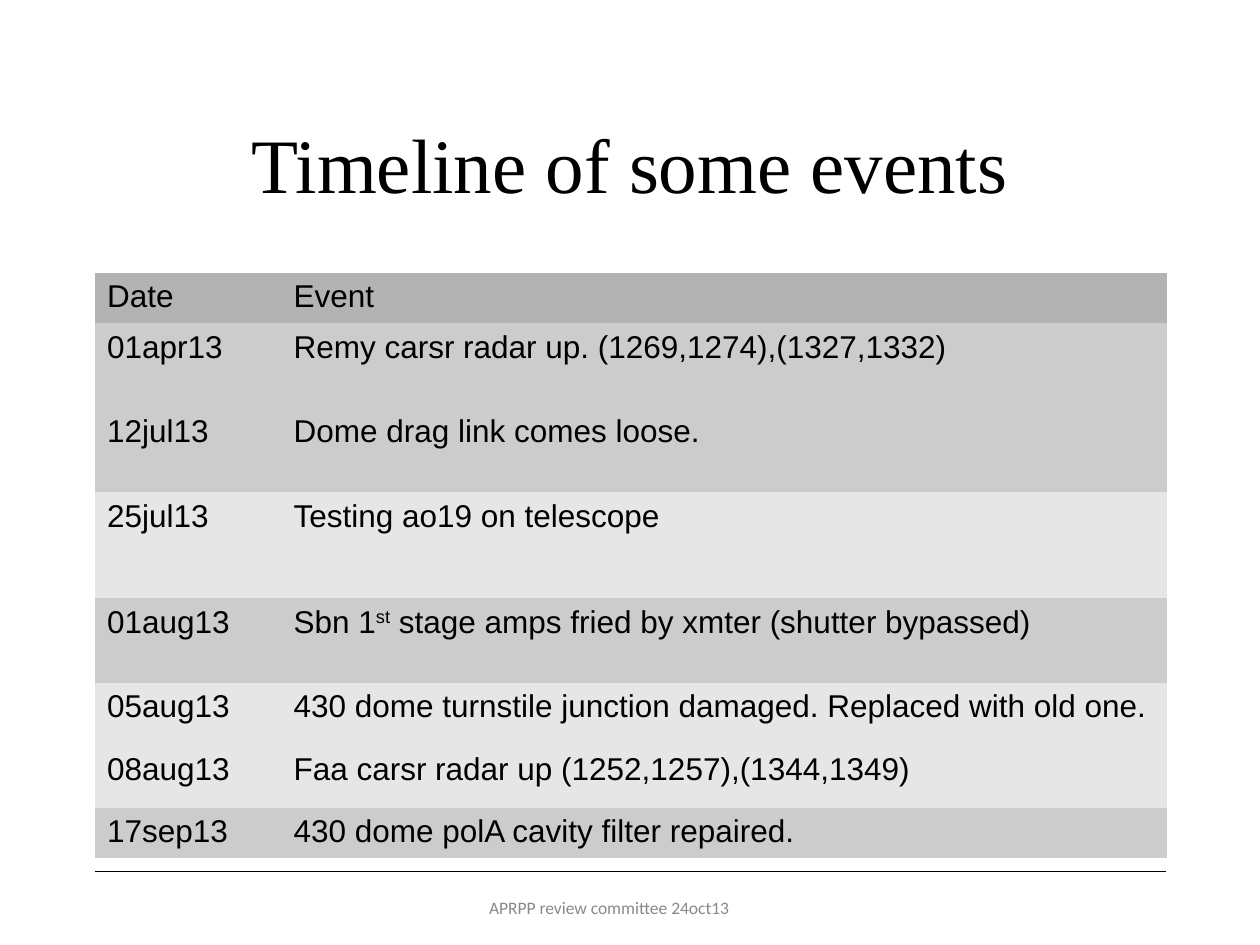
"""Build the slide with a timeline table of telescope events."""
import pptx
import pptx.dml.color
import pptx.enum.shapes
import pptx.enum.text
import pptx.oxml
import pptx.oxml.ns
import pptx.util

Pt = pptx.util.Pt
RGBColor = pptx.dml.color.RGBColor
BLACK = RGBColor(0x00, 0x00, 0x00)
FOOTER_GRAY = RGBColor(0x89, 0x89, 0x89)
HEADER_FILL = RGBColor(0xB3, 0xB3, 0xB3)
DARK_FILL = RGBColor(0xCC, 0xCC, 0xCC)
LIGHT_FILL = RGBColor(0xE6, 0xE6, 0xE6)

COLUMN_WIDTHS = (106.6, 506.4)
EVENTS = (
    ("Date", ("Event",), 27.4, HEADER_FILL),
    ("01apr13", ("Remy carsr radar up. (1269,1274),(1327,1332)",), 48.3, DARK_FILL),
    ("12jul13", ("Dome drag link comes loose.",), 48.3, DARK_FILL),
    ("25jul13", ("Testing ao19 on telescope",), 60.6, LIGHT_FILL),
    ("01aug13", ("Sbn 1", "st", " stage amps fried by xmter (shutter bypassed)"), 48.3, DARK_FILL),
    ("05aug13", ("430 dome turnstile junction damaged. Replaced with old one.",), 35.8, LIGHT_FILL),
    ("08aug13", ("Faa carsr radar up (1252,1257),(1344,1349)",), 35.8, LIGHT_FILL),
    ("17sep13", ("430 dome polA cavity filter repaired.",), 27.4, DARK_FILL),
)


class SlideBuilder:
    def __init__(self, presentation):
        self.slide = presentation.slides.add_slide(presentation.slide_layouts[5])

    def style(self, paragraph, name, size, color):
        paragraph.font.name = name
        paragraph.font.size = Pt(size)
        paragraph.font.color.rgb = color

    def centered_text(self, shape, text, name, size, color):
        frame = shape.text_frame
        frame.text = text
        frame.word_wrap = True
        frame.vertical_anchor = pptx.enum.text.MSO_ANCHOR.MIDDLE
        paragraph = frame.paragraphs[0]
        paragraph.alignment = pptx.enum.text.PP_ALIGN.CENTER
        self.style(paragraph, name, size, color)

    def title(self, text, left, top, width, height):
        shape = self.slide.shapes.title
        shape.left, shape.top, shape.width, shape.height = map(Pt, (left, top, width, height))
        self.centered_text(shape, text, "Times New Roman", 44, BLACK)

    def footer(self, text, left, top, width, height):
        shape = self.slide.shapes.add_textbox(*map(Pt, (left, top, width, height)))
        self.centered_text(shape, text, "Calibri", 10, FOOTER_GRAY)

    def rule(self, left, right, top):
        line = self.slide.shapes.add_connector(
            pptx.enum.shapes.MSO_CONNECTOR.STRAIGHT, Pt(left), Pt(top), Pt(right), Pt(top))
        line.line.color.rgb = BLACK
        line.line.width = Pt(0.75)
        line._element.spPr.append(pptx.oxml.parse_xml(
            f"<a:effectLst {pptx.oxml.ns.nsdecls('a')}/>"))

    def cell(self, cell, pieces, fill):
        cell.margin_top = Pt(5)
        cell.margin_bottom = Pt(3.6)
        paragraph = cell.text_frame.paragraphs[0]
        paragraph.line_spacing = 0.93
        self.style(paragraph, "Arial", 18, BLACK)
        for index, piece in enumerate(pieces):
            run = paragraph.add_run()
            run.text = piece
            self.style(run, "Arial", 18, BLACK)
            if index == 1:
                run.font._element.set("baseline", "30000")
        properties = cell._tc.get_or_add_tcPr()
        for side in ("lnL", "lnR", "lnT", "lnB"):
            properties.append(pptx.oxml.parse_xml(
                f"<a:{side} {pptx.oxml.ns.nsdecls('a')} w='381'><a:solidFill>"
                f"<a:srgbClr val='FFFFFF'/></a:solidFill></a:{side}>"))
        cell.fill.solid()
        cell.fill.fore_color.rgb = fill

    def timeline(self, left, top):
        width = sum(COLUMN_WIDTHS)
        height = sum(event[2] for event in EVENTS)
        table = self.slide.shapes.add_table(
            len(EVENTS), len(COLUMN_WIDTHS), Pt(left), Pt(top), Pt(width), Pt(height)).table
        table.first_row = False
        table.horz_banding = False
        for column, column_width in zip(table.columns, COLUMN_WIDTHS):
            column.width = Pt(column_width)
        for row, (date, event, row_height, fill) in zip(table.rows, EVENTS):
            row.height = Pt(row_height)
            self.cell(row.cells[0], (date,), fill)
            self.cell(row.cells[1], event, fill)


def main():
    presentation = pptx.Presentation()
    presentation.slide_width = Pt(720)
    presentation.slide_height = Pt(540)
    builder = SlideBuilder(presentation)
    builder.rule(54, 666, 498)
    builder.footer("APRPP review committee 24oct13", 234, 504, 228, 29)
    builder.title("Timeline of some events", 54, 48, 612, 90)
    builder.timeline(54, 156)
    presentation.save("out.pptx")


if __name__ == "__main__":
    main()
